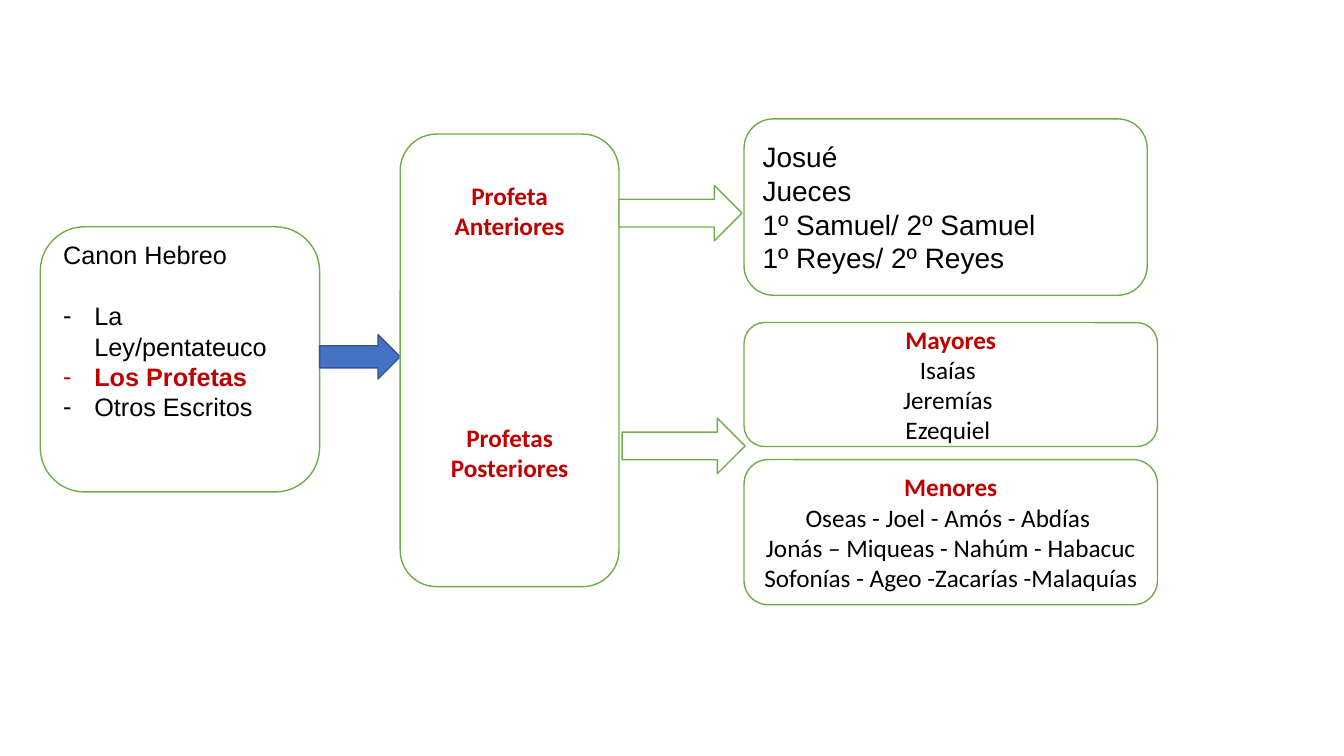
from lxml.etree import SubElement
from pptx import Presentation
from pptx.dml.color import RGBColor
from pptx.enum.shapes import MSO_SHAPE
from pptx.enum.text import MSO_ANCHOR, PP_ALIGN
from pptx.oxml.ns import qn
from pptx.util import Inches, Pt

WIDTH, HEIGHT = Inches(13.33), Inches(7.5)
COLORS = {"white": "FFFFFF", "green": "70AD47", "blue": "4472C4",
          "navy": "325491", "red": "C00000", "black": "000000"}


def color(name):
    """Return a named colour."""
    return RGBColor.from_string(COLORS[name])


def shape(slide, kind, place, fill="white", line="green"):
    """Draw a preset shape; place holds percentages of the slide."""
    left, top, wide, high = place
    item = slide.shapes.add_shape(
        kind, int(WIDTH * left / 100), int(HEIGHT * top / 100),
        int(WIDTH * wide / 100), int(HEIGHT * high / 100))
    item.shadow.inherit = False
    item.fill.solid()
    item.fill.fore_color.rgb = color(fill)
    item.line.color.rgb = color(line)
    item.line.width = Pt(1)
    return item


def arrow(slide, place, fill="white", line="green"):
    """Draw an arrow pointing right."""
    shape(slide, MSO_SHAPE.RIGHT_ARROW, place, fill, line)


def box(slide, place, inset=None):
    """Draw a rounded box and return its text frame, top-set if inset."""
    frame = shape(slide, MSO_SHAPE.ROUNDED_RECTANGLE, place).text_frame
    frame.word_wrap = True
    frame.vertical_anchor = MSO_ANCHOR.MIDDLE
    if inset is not None:
        frame.vertical_anchor = MSO_ANCHOR.TOP
        frame.margin_top = Inches(inset)
    return frame


def para(frame, align=PP_ALIGN.CENTER, gap=0):
    """Return the next paragraph, with a gap in points above it."""
    item = frame.paragraphs[0]
    if item.runs:
        item = frame.add_paragraph()
    item.alignment = align
    item.space_before = Pt(gap)
    return item


def write(item, text, font="Calibri", size=18, red=False):
    """Add a run, bold when red."""
    run = item.add_run()
    run.text = text
    run.font.name = font
    run.font.size = Pt(size)
    run.font.bold = red
    run.font.color.rgb = color("red" if red else "black")


def dash(item):
    """Give a paragraph a hanging dash."""
    props = item._p.get_or_add_pPr()
    indent = Inches(0.31)
    props.set("marL", str(indent))
    props.set("indent", str(-indent))
    SubElement(props, qn("a:buFont"), typeface="Arial")
    SubElement(props, qn("a:buChar"), char="-")


def canon(slide):
    """Draw the box of the Hebrew canon."""
    frame = box(slide, (3, 30, 20.78, 35.07), inset=0)
    write(para(frame, PP_ALIGN.LEFT), "Canon Hebreo", "Arial")
    parts = [("La Ley/pentateuco", 22, False), ("Los Profetas", 0, True),
             ("Otros Escritos", 0, False)]
    for text, gap, red in parts:
        item = para(frame, PP_ALIGN.LEFT, gap)
        dash(item)
        write(item, text, "Arial", red=red)


def groups(slide):
    """Draw the box of the two groups of prophets."""
    frame = box(slide, (29.78, 17.73, 16.28, 59.87), inset=0.35)
    for text, gap in [("Profeta Anteriores", 0), ("Profetas Posteriores", 130)]:
        write(para(frame, gap=gap), text, red=True)


def former(slide):
    """Draw the box of the former prophets."""
    frame = box(slide, (55.36, 15.73, 30, 23.33))
    for text in ["Josué", "Jueces", "1º Samuel/ 2º Samuel",
                 "1º Reyes/ 2º Reyes"]:
        write(para(frame, PP_ALIGN.LEFT), text, "Arial", 20)


def latter(slide, top, high, title, first, *rest):
    """Draw a titled box of latter prophets."""
    frame = box(slide, (55.36, top, 30.76, high))
    item = para(frame)
    write(item, title, red=True)
    item.add_line_break()
    write(item, first)
    for text in rest:
        write(para(frame), text)


def main():
    """Build and save the slide."""
    deck = Presentation()
    deck.slide_width, deck.slide_height = WIDTH, HEIGHT
    slide = deck.slides.add_slide(deck.slide_layouts[6])
    canon(slide)
    arrow(slide, (23.78, 44.27, 6, 5.87), "blue", "navy")
    groups(slide)
    arrow(slide, (46.06, 24.53, 9.15, 7.33))
    former(slide)
    arrow(slide, (46.29, 55.33, 9.15, 7.33))
    latter(slide, 42.67, 16.4, "Mayores", "Isaías ", "Jeremías ", "Ezequiel ")
    latter(slide, 60.8, 19.2, "Menores", "Oseas - Joel - Amós - Abdías ",
           "Jonás – Miqueas - Nahúm - Habacuc "
           "Sofonías - Ageo -Zacarías -Malaquías")
    deck.save("out.pptx")


if __name__ == "__main__":
    main()
